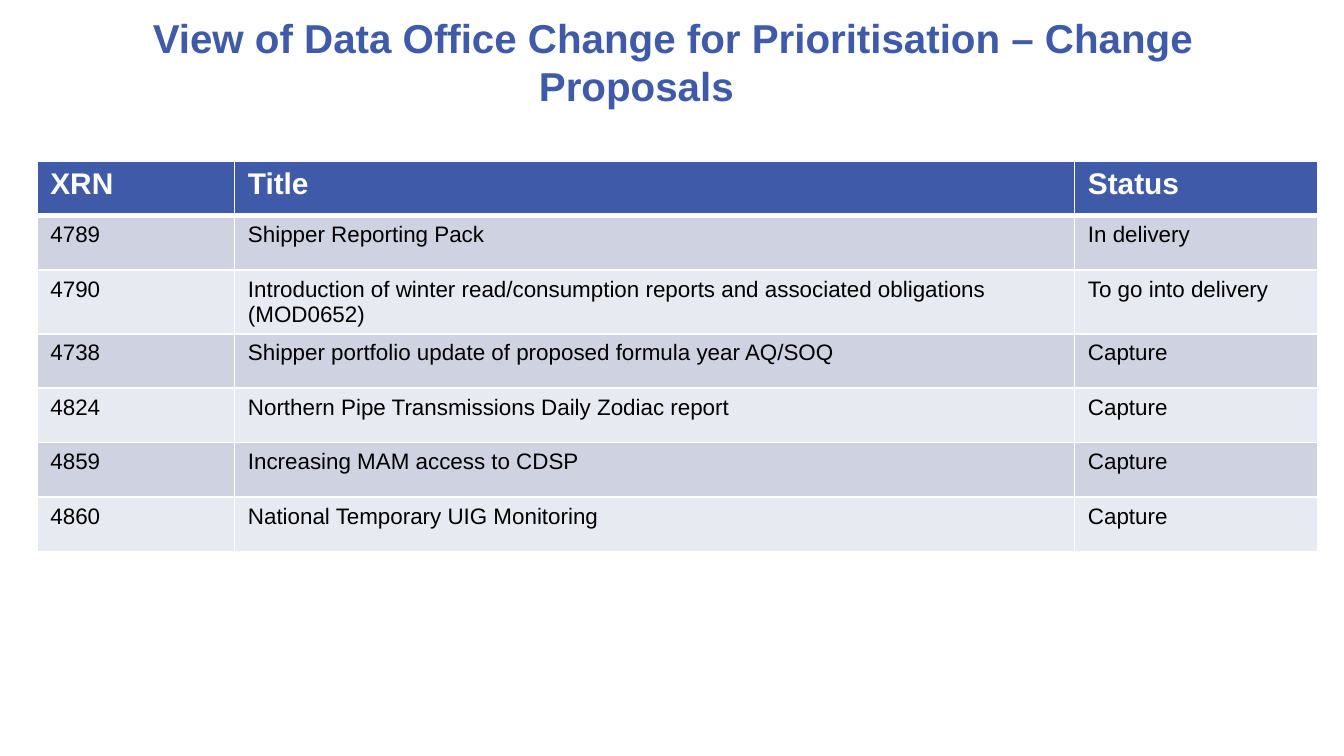
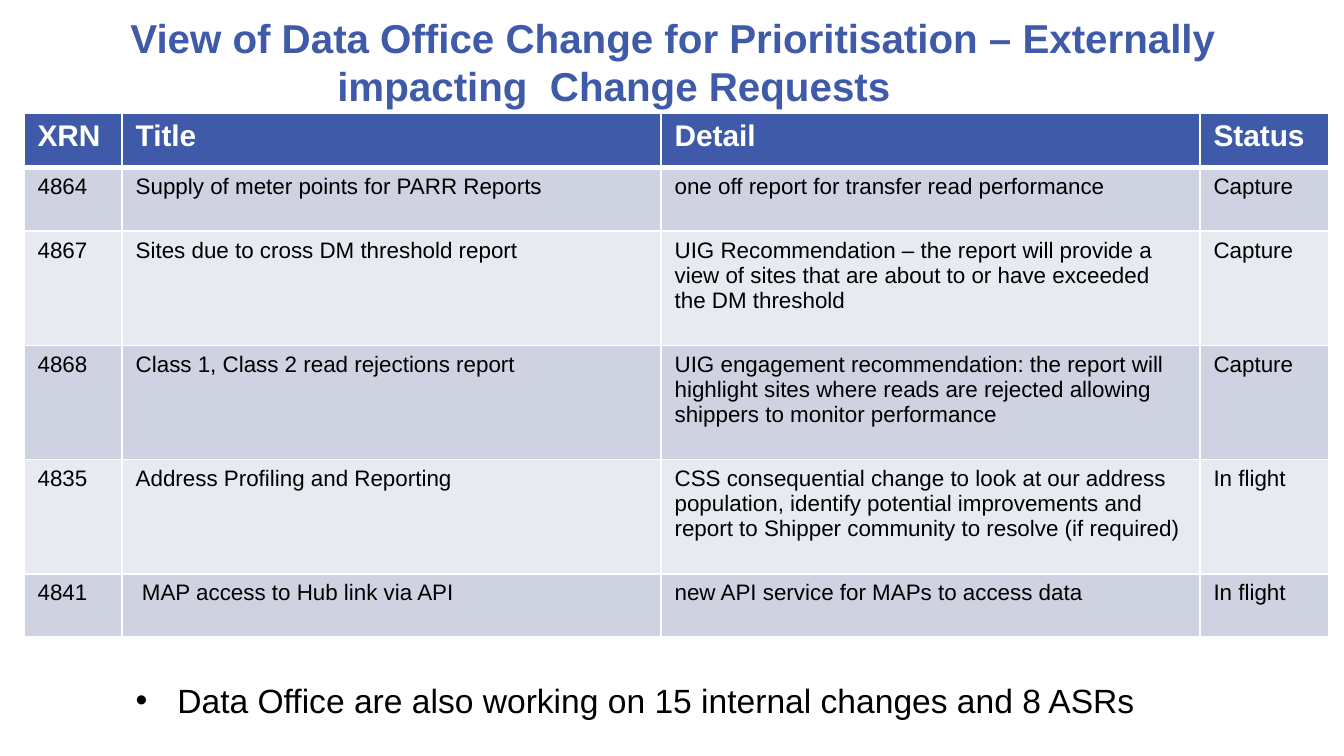
from dataclasses import dataclass
from lxml.etree import SubElement
from pptx import Presentation
from pptx.dml.color import RGBColor
from pptx.enum.text import MSO_ANCHOR, MSO_AUTO_SIZE, PP_ALIGN
from pptx.oxml.ns import qn
from pptx.util import Pt

SCALE = 4572


@dataclass(frozen=True)
class Theme:
    font: str = "Arial"
    blue: str = "3E5AA8"
    white: str = "FFFFFF"
    black: str = "000000"
    bands: tuple = ("CED2E1", "E8EAF1")
    title: float = 21.6
    head: int = 16
    cell: int = 12
    note: int = 18
    thin: int = 1
    thick: int = 3


THEME = Theme()
SIZE = (2000, 1125)
TITLE = (102, 42, 1800, 98)
STOPS = range(200, 1800, 200)

PLANS = {
    "title": "View of Data Office Change for Prioritisation – Change Proposals\t",
    "box": (55, 240),
    "cols": (294, 1250, 362),
    "rows": (81, 81, 95, 81, 81, 81, 81),
    "data": (
        ("XRN", "Title", "Status"),
        ("4789", "Shipper Reporting Pack", "In delivery"),
        ("4790", "Introduction of winter read/consumption reports and associated "
                 "obligations (MOD0652)", "To go into delivery"),
        ("4738", "Shipper portfolio update of proposed formula year AQ/SOQ", "Capture"),
        ("4824", "Northern Pipe Transmissions Daily Zodiac report", "Capture"),
        ("4859", "Increasing MAM access to CDSP", "Capture"),
        ("4860", "National Temporary UIG Monitoring", "Capture"),
    ),
}

ASKS = {
    "title": "View of Data Office Change for Prioritisation – Externally "
             "impacting  Change Requests\t",
    "box": (36, 168),
    "cols": (146, 802, 802, 192),
    "rows": (81, 95, 170, 170, 170, 94),
    "data": (
        ("XRN", "Title", "Detail", "Status"),
        ("4864", "Supply of meter points for PARR Reports",
         "one off report for transfer read performance", "Capture"),
        ("4867", "Sites due to cross DM threshold report",
         "UIG Recommendation – the report will provide a view of sites that are "
         "about to or have exceeded the DM threshold", "Capture"),
        ("4868", "Class 1, Class 2 read rejections report",
         "UIG engagement recommendation: the report will highlight sites where "
         "reads are rejected allowing shippers to monitor performance", "Capture"),
        ("4835", "Address Profiling and Reporting",
         "CSS consequential change to look at our address population, identify "
         "potential improvements and report to Shipper community to resolve "
         "(if required)", "In flight"),
        ("4841", " MAP access to Hub link via API",
         "new API service for MAPs to access data", "In flight"),
    ),
    "note": "Data Office are also working on 15 internal changes and 8 ASRs",
    "place": (182, 1002, 1796, 80),
}


def px(count):
    return count * SCALE


def write(frame, text, size, color=THEME.black, bold=False,
          align=PP_ALIGN.LEFT, bullet=None, indent=0, stops=()):
    frame.word_wrap = True
    frame.text = text
    para = frame.paragraphs[0]
    props = para._p.get_or_add_pPr()
    if bullet:
        props.set("marL", str(px(indent)))
        props.set("indent", str(px(-indent)))
        SubElement(props, qn("a:buChar"), char=bullet)
    if stops:
        tabs = SubElement(props, qn("a:tabLst"))
        for stop in stops:
            SubElement(tabs, qn("a:tab"), pos=str(px(stop)), algn="l")
    para.alignment = align
    para.line_spacing = 1.0
    para.space_before = Pt(0)
    font = para.runs[0].font
    font.name = THEME.font
    font.size = Pt(size)
    font.bold = bold
    font.color.rgb = RGBColor.from_string(color)


def place(shape, box):
    shape.left, shape.top, shape.width, shape.height = map(px, box)


def edge(cell, top, low):
    props = cell._tc.get_or_add_tcPr()
    widths = {"lnL": THEME.thin, "lnR": THEME.thin, "lnT": top, "lnB": low}
    for side, width in widths.items():
        line = SubElement(props, qn(f"a:{side}"), w=str(int(Pt(width))))
        fill = SubElement(line, qn("a:solidFill"))
        SubElement(fill, qn("a:srgbClr"), val=THEME.white)


def paint(cell, text, row):
    head = row == 0
    edge(cell, THEME.thick if row == 1 else THEME.thin,
         THEME.thick if head else THEME.thin)
    tint = THEME.blue if head else THEME.bands[(row - 1) % 2]
    cell.fill.solid()
    cell.fill.fore_color.rgb = RGBColor.from_string(tint)
    write(cell.text_frame, text, THEME.head if head else THEME.cell,
          color=THEME.white if head else THEME.black, bold=head)


def grid(slide, box, cols, rows, data):
    size = (sum(cols), sum(rows))
    table = slide.shapes.add_table(
        len(rows), len(cols), *map(px, box + size)).table
    for col, width in zip(table.columns, cols):
        col.width = px(width)
    for row, (high, texts) in enumerate(zip(rows, data)):
        table.rows[row].height = px(high)
        for col, text in enumerate(texts):
            paint(table.cell(row, col), text, row)


def head(slide, text):
    shape = slide.shapes.title
    place(shape, TITLE)
    frame = shape.text_frame
    frame.auto_size = MSO_AUTO_SIZE.NONE
    frame.vertical_anchor = MSO_ANCHOR.MIDDLE
    write(frame, text, THEME.title, color=THEME.blue, bold=True,
          align=PP_ALIGN.CENTER, stops=STOPS)


def note(slide, text, box):
    shape = slide.placeholders[1]
    place(shape, box)
    frame = shape.text_frame
    frame.auto_size = MSO_AUTO_SIZE.SHAPE_TO_FIT_TEXT
    frame.vertical_anchor = MSO_ANCHOR.TOP
    write(frame, text, THEME.note, bullet="•", indent=62)


def page(deck, plan):
    slide = deck.slides.add_slide(deck.slide_layouts[1 if "note" in plan else 5])
    head(slide, plan["title"])
    grid(slide, plan["box"], plan["cols"], plan["rows"], plan["data"])
    if "note" in plan:
        note(slide, plan["note"], plan["place"])


def main():
    deck = Presentation()
    deck.slide_width, deck.slide_height = map(px, SIZE)
    for plan in (PLANS, ASKS):
        page(deck, plan)
    deck.save("out.pptx")


if __name__ == "__main__":
    main()
